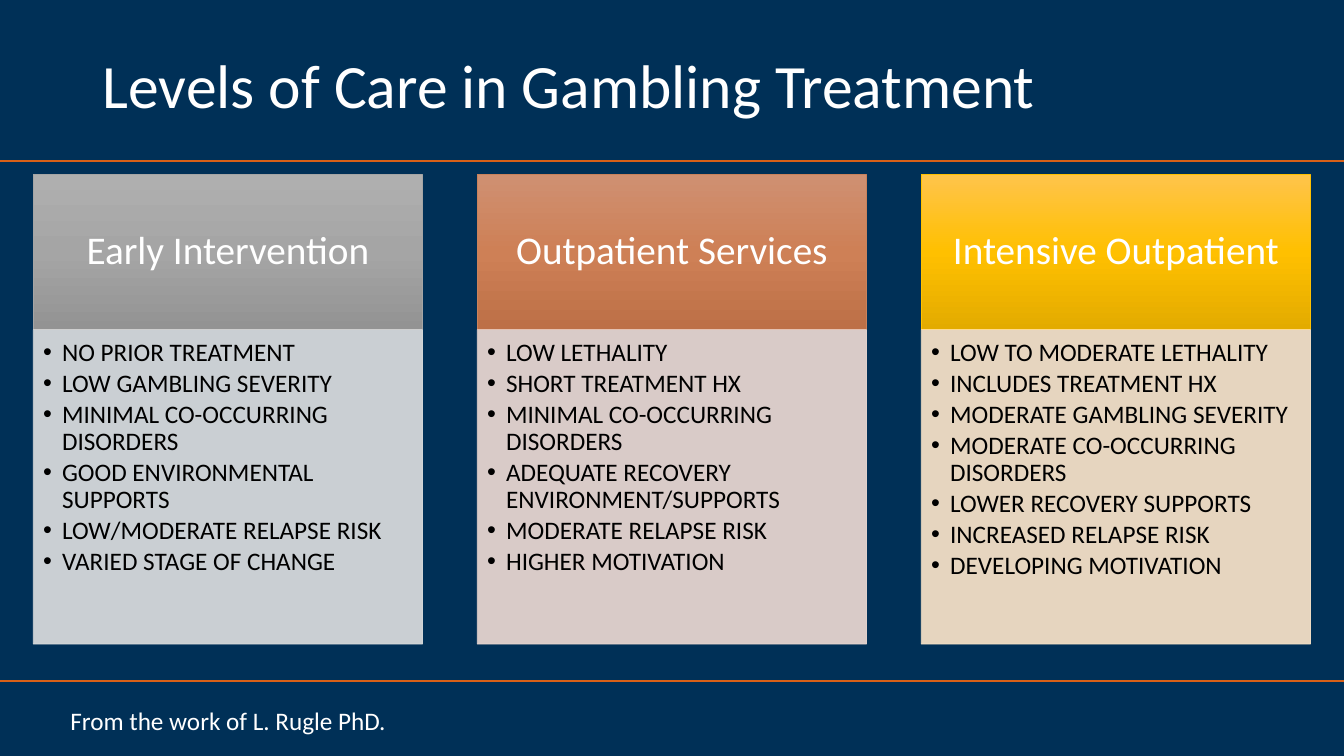
from copy import deepcopy
from dataclasses import dataclass

from lxml.etree import SubElement
from pptx import Presentation
from pptx.dml.color import RGBColor
from pptx.enum.shapes import MSO_CONNECTOR as Connector, MSO_SHAPE as Preset
from pptx.enum.text import MSO_ANCHOR as Anchor, PP_ALIGN as Align
from pptx.oxml.ns import qn
from pptx.shapes.autoshape import Shape
from pptx.slide import Slide
from pptx.util import Pt

SLIDE_WIDTH, SLIDE_HEIGHT = 960, 540
NAVY, ORANGE, WHITE, BLACK = "003057", "D86018", "FFFFFF", "000000"
LEVEL_LEFT, LEVEL_STEP, LEVEL_WIDTH = 23.76, 317.16, 278
HEADER_TOP, HEADER_HEIGHT, CRITERIA_HEIGHT = 124.56, 110.88, 224.64
CRITERIA_OPACITY = 90


@dataclass(frozen=True)
class CareLevel:
    name: str
    shades: tuple[str, str, str]
    edge: str
    tint: str
    criteria: tuple[str, ...]


CARE_LEVELS = (
    CareLevel("Early Intervention", ("AFAFAF", "A5A5A5", "939393"), "A5A5A5", "E1E1E1", (
        "NO PRIOR TREATMENT",
        "LOW GAMBLING SEVERITY",
        "MINIMAL CO-OCCURRING DISORDERS",
        "GOOD ENVIRONMENTAL SUPPORTS",
        "LOW/MODERATE RELAPSE RISK",
        "VARIED STAGE OF CHANGE",
    )),
    CareLevel("Outpatient Services", ("CF9072", "CE8056", "BD7047"), "C9825C", "F1DCD5", (
        "LOW LETHALITY",
        "SHORT TREATMENT HX",
        "MINIMAL CO-OCCURRING DISORDERS",
        "ADEQUATE RECOVERY ENVIRONMENT/SUPPORTS",
        "MODERATE RELAPSE RISK",
        "HIGHER MOTIVATION",
    )),
    CareLevel("Intensive Outpatient", ("FFC44B", "FFC000", "E3AB00"), "FFC000", "FFE8CB", (
        "LOW TO MODERATE LETHALITY",
        "INCLUDES TREATMENT HX",
        "MODERATE GAMBLING SEVERITY",
        "MODERATE CO-OCCURRING DISORDERS",
        "LOWER RECOVERY SUPPORTS",
        "INCREASED RELAPSE RISK",
        "DEVELOPING MOTIVATION",
    )),
)


def color(hex_value: str) -> RGBColor:
    return RGBColor.from_string(hex_value)


def write(shape: Shape, *lines: str, size: float, ink: str = WHITE,
          align: Align = Align.LEFT, anchor: Anchor = Anchor.TOP,
          insets: tuple[float, float, float, float] = (7.2, 3.6, 7.2, 3.6),
          wrap: bool = True, spacing: float = 1.0, after: float = 0,
          indent: float = 0) -> None:
    frame = shape.text_frame
    frame.word_wrap = wrap
    frame.vertical_anchor = anchor
    (frame.margin_left, frame.margin_top,
     frame.margin_right, frame.margin_bottom) = map(Pt, insets)
    for index, line in enumerate(lines):
        paragraph = frame.add_paragraph() if index else frame.paragraphs[0]
        paragraph.text = line
        paragraph.alignment = align
        paragraph.line_spacing = spacing
        paragraph.space_after = Pt(after)
        if indent:
            properties = paragraph._p.get_or_add_pPr()
            properties.set("marL", str(Pt(indent)))
            properties.set("indent", str(-Pt(indent)))
            SubElement(properties, qn("a:buFont"), typeface="Arial")
            SubElement(properties, qn("a:buChar"), char="•")
        paragraph.font.name = "Calibri"
        paragraph.font.size = Pt(size)
        paragraph.font.color.rgb = color(ink)


def add_text_box(slide: Slide, left: float, top: float, width: float, height: float) -> Shape:
    return slide.shapes.add_textbox(Pt(left), Pt(top), Pt(width), Pt(height))


def add_panel(slide: Slide, left: float, top: float, height: float, edge: str) -> Shape:
    panel = slide.shapes.add_shape(
        Preset.RECTANGLE, Pt(left), Pt(top), Pt(LEVEL_WIDTH), Pt(height))
    panel.shadow.inherit = False
    panel.line.color.rgb = color(edge)
    panel.line.width = Pt(0.5)
    return panel


def shade(panel: Shape, shades: tuple[str, str, str]) -> None:
    panel.fill.gradient()
    panel.fill.gradient_angle = 270
    stop_list = panel._element.spPr.find(qn("a:gradFill")).find(qn("a:gsLst"))
    stop_list.insert(1, deepcopy(stop_list[0]))
    for stop, position, hex_value in zip(panel.fill.gradient_stops, (0, 0.5, 1), shades):
        stop.position = position
        stop.color.rgb = color(hex_value)


def tint(panel: Shape, hex_value: str) -> None:
    panel.fill.solid()
    panel.fill.fore_color.rgb = color(hex_value)
    for swatch in panel._element.spPr.iter(qn("a:srgbClr")):
        SubElement(swatch, qn("a:alpha"), val=str(CRITERIA_OPACITY * 1000))


def add_rule(slide: Slide, top: float) -> None:
    rule = slide.shapes.add_connector(
        Connector.STRAIGHT, Pt(0), Pt(top), Pt(SLIDE_WIDTH), Pt(top))
    rule.line.color.rgb = color(ORANGE)
    rule.line.width = Pt(1.5)
    SubElement(rule._element.spPr, qn("a:effectLst"))


def add_care_level(slide: Slide, left: float, level: CareLevel) -> None:
    header = add_panel(slide, left, HEADER_TOP, HEADER_HEIGHT, level.edge)
    shade(header, level.shades)
    write(header, level.name, size=28, align=Align.CENTER, anchor=Anchor.MIDDLE,
          insets=(15.84, 8.64, 15.84, 8.64), spacing=0.9)

    criteria = add_panel(slide, left, HEADER_TOP + HEADER_HEIGHT, CRITERIA_HEIGHT, level.tint)
    tint(criteria, level.tint)
    write(criteria, *level.criteria, size=18, ink=BLACK,
          insets=(7.2, 7.2, 10.08, 11.52), spacing=0.9, after=2.7, indent=13.5)


def main() -> None:
    deck = Presentation()
    deck.slide_width, deck.slide_height = Pt(SLIDE_WIDTH), Pt(SLIDE_HEIGHT)
    slide = deck.slides.add_slide(deck.slide_layouts[6])
    slide.background.fill.solid()
    slide.background.fill.fore_color.rgb = color(NAVY)

    for rule_top in (115.2, 486.72):
        add_rule(slide, rule_top)

    title = add_text_box(slide, 66.24, 10.8, 828, 104.4)
    write(title, "Levels of Care in Gambling Treatment", size=44,
          anchor=Anchor.MIDDLE, spacing=0.9)

    for index, level in enumerate(CARE_LEVELS):
        add_care_level(slide, LEVEL_LEFT + index * LEVEL_STEP, level)

    credit = add_text_box(slide, 43.2, 500.4, 242.64, 28.8)
    write(credit, "From the work of L. Rugle PhD.", size=18, wrap=False)

    deck.save("out.pptx")


if __name__ == "__main__":
    main()
